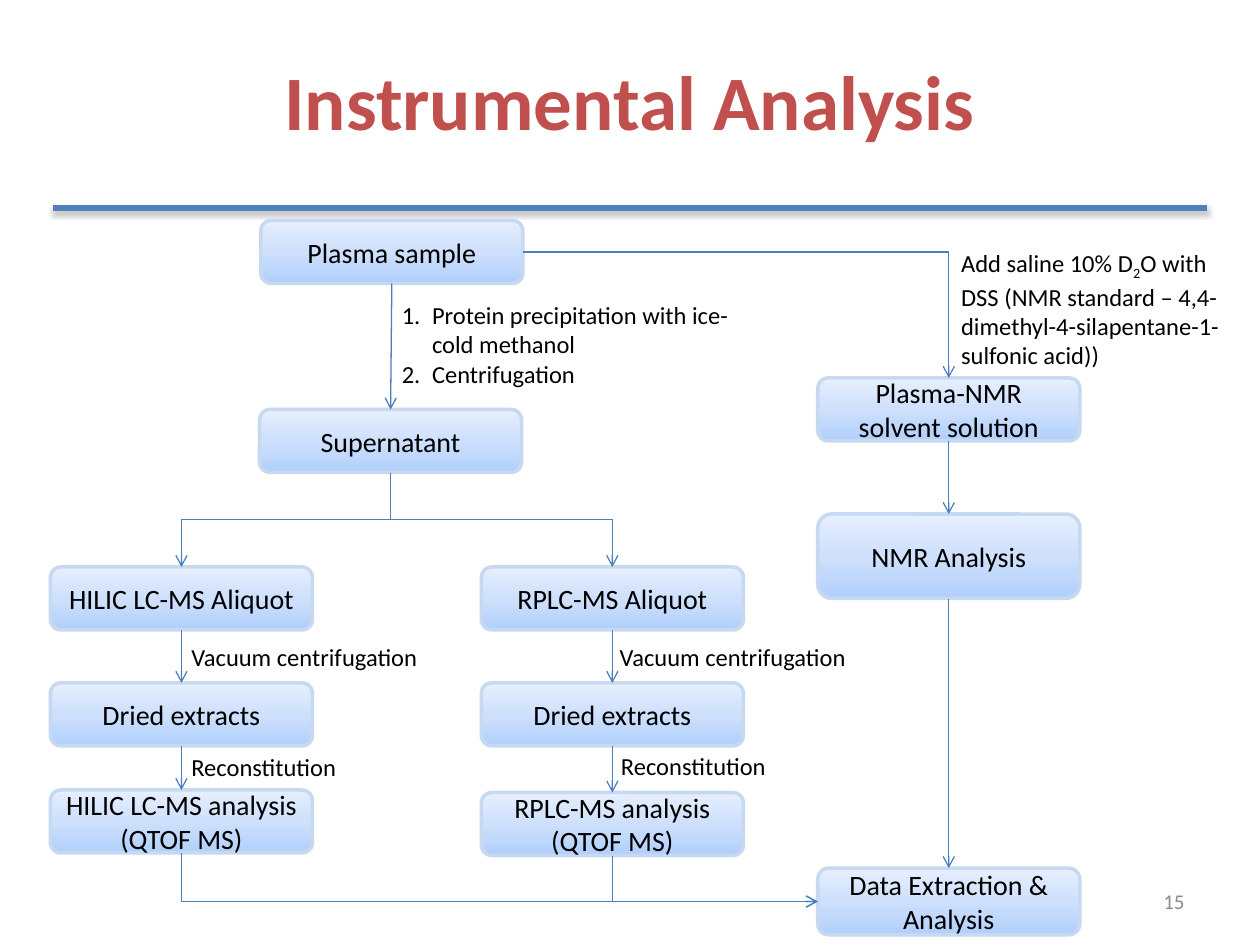
from lxml import etree
from pptx import Presentation
from pptx.dml.color import RGBColor
from pptx.enum.shapes import MSO_CONNECTOR, MSO_SHAPE
from pptx.enum.text import MSO_ANCHOR, MSO_AUTO_SIZE, PP_ALIGN
from pptx.oxml import parse_xml
from pptx.oxml.ns import nsdecls, qn
from pptx.util import Inches, Pt

STRAIGHT, ELBOW = MSO_CONNECTOR.STRAIGHT, MSO_CONNECTOR.ELBOW
LEFT, CENTER, RIGHT = PP_ALIGN.LEFT, PP_ALIGN.CENTER, PP_ALIGN.RIGHT
TOP, MIDDLE = MSO_ANCHOR.TOP, MSO_ANCHOR.MIDDLE

FONT = "Calibri"
BLACK = RGBColor(0x00, 0x00, 0x00)
RED = RGBColor(0xC0, 0x50, 0x4D)
BLUE = RGBColor(0x4F, 0x81, 0xBD)
ARROW = RGBColor(0x4B, 0x7E, 0xBC)
BORDER = RGBColor(0xC6, 0xD9, 0xF1)
GRAY = RGBColor(0x8C, 0x8C, 0x8C)
GRADIENT = [(0, "B0CFFB"), (50, "CEE0FC"), (100, "E6EFFD")]

# Content: name -> (text, left, top, height)
BOX_W = 2.08
HILIC_X, RPLC_X, NMR_X = 0.4, 3.82, 6.49
BOXES = {
    "plasma": ("Plasma sample", 2.07, 1.75, 0.5),
    "supernatant": ("Supernatant", 2.06, 3.25, 0.5),
    "hilic": ("HILIC LC-MS Aliquot", HILIC_X, 4.5, 0.5),
    "hilic_dry": ("Dried extracts", HILIC_X, 5.42, 0.5),
    "hilic_ms": ("HILIC LC-MS analysis\n(QTOF MS)", HILIC_X, 6.27, 0.5),
    "rplc": ("RPLC-MS Aliquot", RPLC_X, 4.5, 0.5),
    "rplc_dry": ("Dried extracts", RPLC_X, 5.42, 0.5),
    "rplc_ms": ("RPLC-MS analysis\n(QTOF MS)", RPLC_X, 6.29, 0.5),
    "solvent": ("Plasma-NMR solvent solution", NMR_X, 3, 0.5),
    "nmr": ("NMR Analysis", NMR_X, 4.08, 0.67),
    "data": ("Data Extraction & Analysis", NMR_X, 6.89, 0.53),
}
DOWN_ARROWS = [
    ("plasma", "supernatant"), ("hilic", "hilic_dry"), ("hilic_dry", "hilic_ms"),
    ("rplc", "rplc_dry"), ("rplc_dry", "rplc_ms"), ("solvent", "nmr"), ("nmr", "data"),
]
BRANCHES = [("supernatant", "hilic"), ("supernatant", "rplc")]
MERGES = [("hilic_ms", "data"), ("rplc_ms", "data")]
STEP_LABELS = [
    ("Vacuum centrifugation", 1.42, 5.05), ("Reconstitution", 1.42, 5.92),
    ("Vacuum centrifugation", 4.82, 5.05), ("Reconstitution", 4.83, 5.91),
]
PREP_STEPS = "Protein precipitation with ice-cold methanol\nCentrifugation"
# Text between underscores is subscript
NMR_NOTE = ("Add saline 10% D_2_O with DSS (NMR standard – "
            "4,4-dimethyl-4-silapentane-1-sulfonic acid))")


def write(sp, text, size=14, color=BLACK, bold=False, align=LEFT, anchor=TOP,
          hanging=0, numbered=False):
    tf = sp.text_frame
    tf.word_wrap = True
    tf.vertical_anchor = anchor
    for i, line in enumerate(text.split("\n")):
        p = tf.add_paragraph() if i else tf.paragraphs[0]
        p.alignment = align
        if hanging:
            pPr = p._p.get_or_add_pPr()
            pPr.set("marL", str(Inches(hanging)))
            pPr.set("indent", str(-Inches(hanging)))
            if numbered:
                etree.SubElement(pPr, qn("a:buFont")).set("typeface", "+mj-lt")
                etree.SubElement(pPr, qn("a:buAutoNum")).set("type", "arabicPeriod")
        for j, part in enumerate(line.split("_")):
            r = p.add_run()
            r.text = part
            r.font.name, r.font.size, r.font.bold = FONT, Pt(size), bold
            r.font.color.rgb = color
            if j % 2:
                r._r.get_or_add_rPr().set("baseline", "-25000")


def add_label(text, x, y, w, h, grow=True, **fmt):
    sp = slide.shapes.add_textbox(Inches(x), Inches(y), Inches(w), Inches(h))
    write(sp, text, **fmt)
    if grow:
        sp.text_frame.auto_size = MSO_AUTO_SIZE.SHAPE_TO_FIT_TEXT


def add_box(text, x, y, h):
    sp = slide.shapes.add_shape(MSO_SHAPE.ROUNDED_RECTANGLE, Inches(x), Inches(y),
                                Inches(BOX_W), Inches(h))
    stops = "".join(f'<a:gs pos="{pos * 1000}"><a:srgbClr val="{rgb}"/></a:gs>'
                    for pos, rgb in GRADIENT)
    sp._element.spPr.find(qn("a:prstGeom")).addnext(parse_xml(
        f'<a:gradFill {nsdecls("a")} rotWithShape="1"><a:gsLst>{stops}</a:gsLst>'
        '<a:lin ang="16200000" scaled="0"/></a:gradFill>'))
    sp.line.color.rgb, sp.line.width = BORDER, Pt(2)
    sp.shadow.inherit = False
    write(sp, text, size=16, align=CENTER, anchor=MIDDLE)
    return sp


def add_line(kind, start, end, color=ARROW, width=0.75, arrow=True):
    c = slide.shapes.add_connector(kind, *(Inches(v) for v in start + end))
    c.line.color.rgb, c.line.width = color, Pt(width)
    if arrow:
        etree.SubElement(c.line._get_or_add_ln(), qn("a:tailEnd")).set("type", "arrow")
    etree.SubElement(c._element.spPr, qn("a:effectLst"))
    return c


def add_elbow(start, end, preset, down_first=True):
    c = add_line(ELBOW, start, end)
    c._element.spPr.find(qn("a:prstGeom")).set("prst", preset)
    if down_first:  # turn the frame a quarter about its centre
        (x1, y1), (x2, y2) = start, end
        w, h = y2 - y1, abs(x2 - x1)
        c.left, c.top = Inches((x1 + x2 - w) / 2), Inches((y1 + y2 - h) / 2)
        c.width, c.height = Inches(w), Inches(h)
        xfrm = c._element.spPr.find(qn("a:xfrm"))
        xfrm.attrib.pop("flipH", None)
        xfrm.set("rot", "5400000" if x2 < x1 else "16200000")
        if x2 > x1:
            xfrm.set("flipH", "1")


def side(name, where):
    _, x, y, h = BOXES[name]
    return {"top": (x + BOX_W / 2, y), "bottom": (x + BOX_W / 2, y + h),
            "left": (x, y + h / 2), "right": (x + BOX_W, y + h / 2)}[where]


prs = Presentation()
prs.slide_width, prs.slide_height = Inches(10), Inches(7.5)
slide = prs.slides.add_slide(prs.slide_layouts[5])

# Title and rule
title = slide.shapes.title
title.left, title.top, title.width, title.height = map(Inches, (1, 0.25, 8, 1.08))
write(title, "Instrumental Analysis", size=44, color=RED, bold=True,
      align=CENTER, anchor=MIDDLE)
rule = add_line(STRAIGHT, (0.42, 1.65), (9.58, 1.65), color=BLUE, width=3, arrow=False)
rule._element.spPr.find(qn("a:effectLst")).append(parse_xml(
    f'<a:outerShdw {nsdecls("a")} blurRad="{Pt(3.1)}" dist="{Pt(1.8)}" dir="5400000" '
    'rotWithShape="0"><a:srgbClr val="000000"><a:alpha val="35000"/></a:srgbClr>'
    '</a:outerShdw>'))

# Flow boxes
shapes = {name: add_box(*box) for name, box in BOXES.items()}

# Arrows
for a, b in DOWN_ARROWS:
    c = add_line(STRAIGHT, side(a, "bottom"), side(b, "top"))
    c.begin_connect(shapes[a], 2)
    c.end_connect(shapes[b], 0)
for a, b in BRANCHES:
    add_elbow(side(a, "bottom"), side(b, "top"), "bentConnector3")
for a, b in MERGES:
    add_elbow(side(a, "bottom"), side(b, "left"), "bentConnector2")
add_elbow(side("plasma", "right"), side("solvent", "top"), "bentConnector2",
          down_first=False)

# Labels beside the arrows
add_label(PREP_STEPS, 3.09, 2.33, 2.91, 0.81, hanging=0.24, numbered=True)
add_label(NMR_NOTE, 7.53, 1.92, 2.3, 1.04)
for text, x, y in STEP_LABELS:
    add_label(text, x, y, BOX_W, 0.34, hanging=0.38)

# Slide number
add_label("15", 7.17, 6.95, 2.33, 0.4, grow=False, size=12, color=GRAY,
          align=RIGHT, anchor=MIDDLE)

prs.save("out.pptx")
